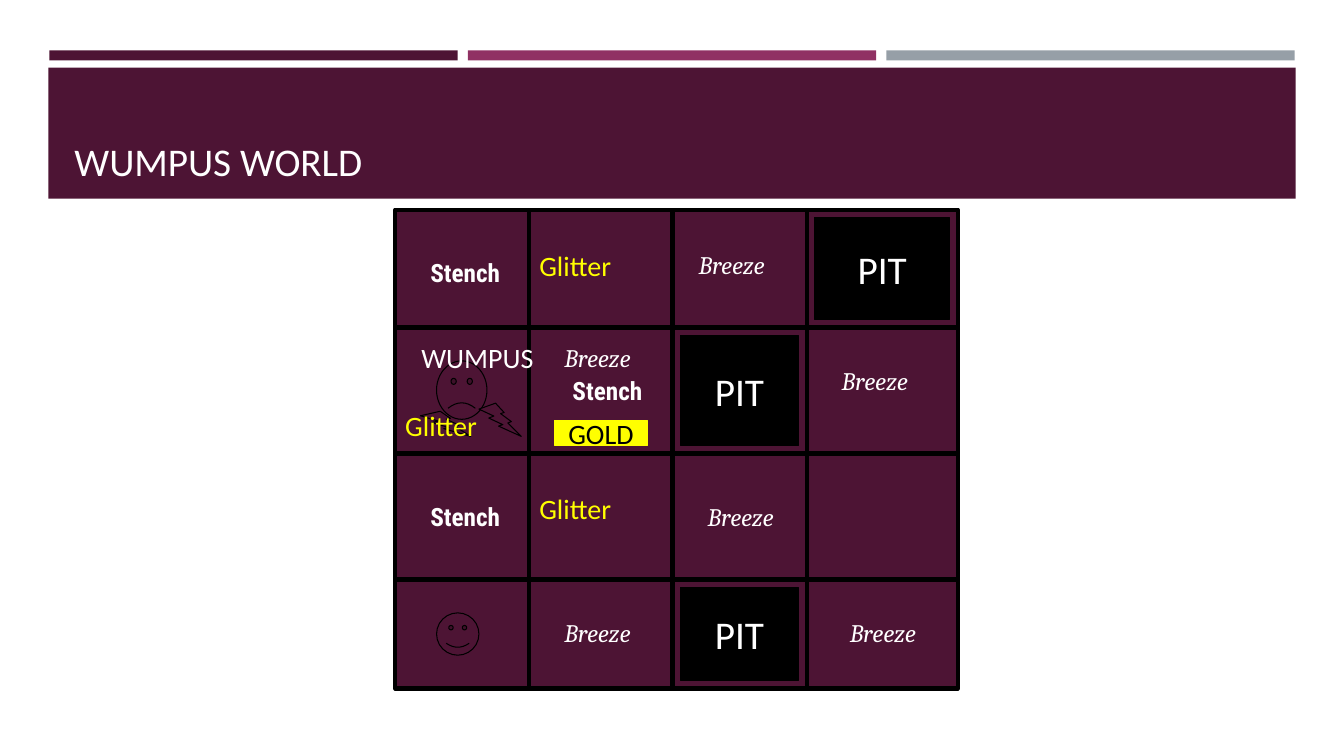
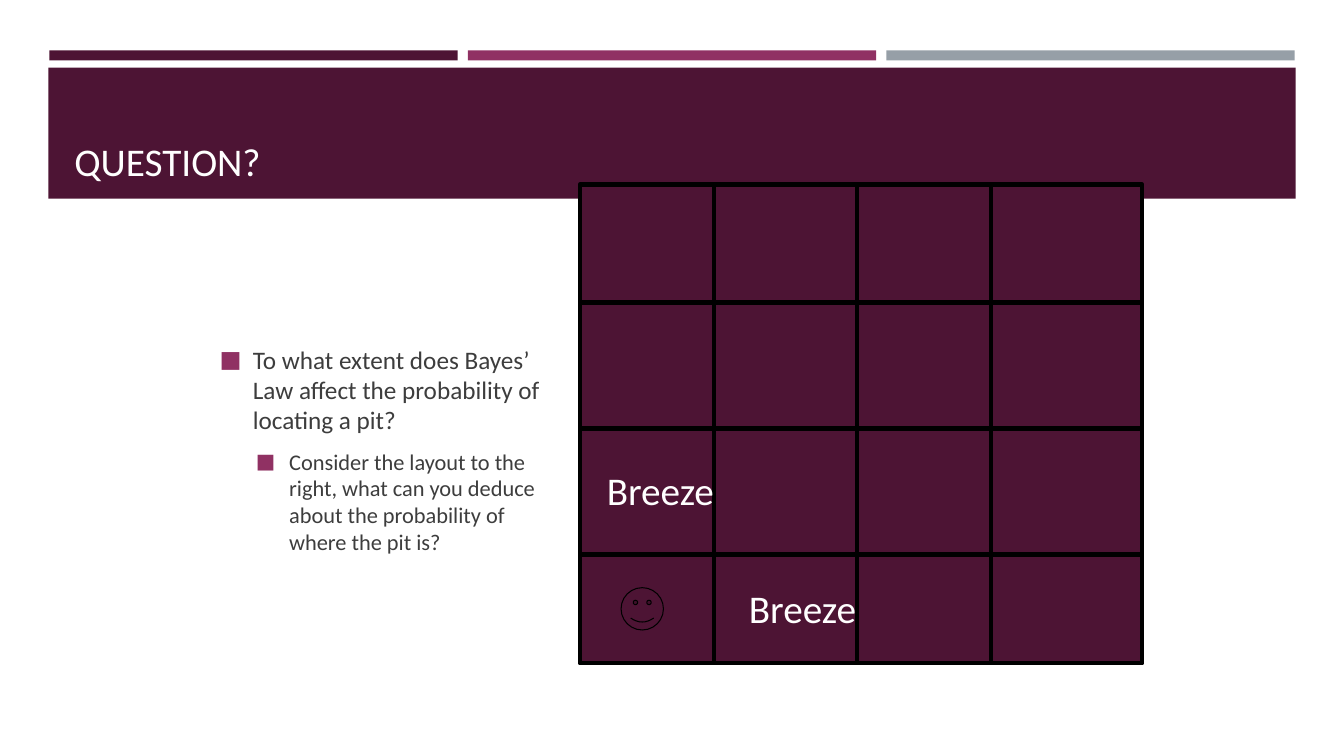
from dataclasses import dataclass

from lxml import etree
from pptx import Presentation
from pptx.dml.color import RGBColor
from pptx.enum.shapes import MSO_CONNECTOR, MSO_SHAPE
from pptx.enum.text import MSO_ANCHOR, MSO_AUTO_SIZE, PP_ALIGN
from pptx.oxml.ns import qn
from pptx.util import Inches, Pt

RECTANGLE = MSO_SHAPE.RECTANGLE
SMILEY = MSO_SHAPE.SMILEY_FACE
BOLT = MSO_SHAPE.LIGHTNING_BOLT
STRAIGHT = MSO_CONNECTOR.STRAIGHT
TOP, MIDDLE, BOTTOM = MSO_ANCHOR.TOP, MSO_ANCHOR.MIDDLE, MSO_ANCHOR.BOTTOM
GROW = MSO_AUTO_SIZE.SHAPE_TO_FIT_TEXT
CENTER = PP_ALIGN.CENTER


@dataclass(frozen=True)
class TextStyle:
    font: str
    size: int
    color: str
    bold: bool = False
    italic: bool = False


class Theme:
    plum, magenta, gray = "4D1434", "903163", "969FA7"
    white, black, yellow, ink = "FFFFFF", "000000", "FFFF00", "3D3D3D"
    heading = TextStyle("Calibri", 28, white)
    breeze = TextStyle("Cambria", 18, white, italic=True)
    stench = TextStyle("Roboto Condensed", 18, white, bold=True)
    glitter = TextStyle("Calibri", 20, yellow)
    wumpus = TextStyle("Calibri", 20, white)
    gold = TextStyle("Calibri", 20, black)
    body = (TextStyle("Calibri", 18, ink), TextStyle("Calibri", 16, ink))
    grid_line, thin_line = 3, 0.75


# Board edges, measured from the top left corner of the board
COLUMNS = (0, 1.33, 2.75, 4.08, 5.58)
ROWS = (0, 1.17, 2.42, 3.67, 4.75)
PIT_MARGIN = 0.08

WORLD_TITLE = "WUMPUS WORLD"
WORLD_CORNER = (3.92, 2.08)
PIT_CELLS = [(2, 1), (3, 0), (2, 3)]  # column, row
# text, style, box size, places on the board
WORLD_LABELS = [
    ("Breeze", Theme.breeze, (0.94, 0.4),
     [(2.91, 0.34), (4.33, 1.5), (1.58, 1.27), (3, 2.84), (4.41, 4), (1.58, 4)]),
    ("WUMPUS", Theme.wumpus, (1.38, 0.44), [(0.16, 1.25)]),
    ("Stench", Theme.stench, (1.04, 0.4), [(0.25, 0.42), (1.66, 1.59), (0.25, 2.84)]),
    ("Glitter", Theme.glitter, (1.38, 0.44), [(1.33, 2.75), (1.33, 0.34), (0, 1.92)]),
]
GOLD_BAR = (1.58, 2.09, 0.92, 0.25)
WUMPUS_FACE = (0.41, 1.5, 0.5, 0.58)
WUMPUS_BOLTS = [(0.83, 1.92, 0.42, 0.33), (0.25, 2, 0.5, 0.25)]
AGENT_FACE = (0.41, 4, 0.42, 0.42)
SMILE = 0.047

QUESTION_TITLE = "QUESTION?"
QUESTION_CORNER = (5.75, 1.83)
QUESTION_LABELS = [("Breeze", Theme.heading, (1.3, 0.57), [(0.17, 2.75), (1.58, 3.92)])]
QUESTION_BODY = [
    (0, "To what extent does Bayes’ Law affect the probability of locating a pit?"),
    (1, "Consider the layout to the right, what can you deduce about the "
        "probability of where the pit is?"),
]
BODY_INDENTS = (0.33, 0.69)
BULLET_HANG = 0.33


def rgb(color):
    return RGBColor.from_string(color)


def write(paragraph, text, style):
    paragraph.text = text
    font = paragraph.runs[0].font
    font.name, font.size, font.color.rgb = style.font, Pt(style.size), rgb(style.color)
    font.bold, font.italic = style.bold, style.italic


def add_shape(slide, kind, box, fill, line=None, width=Theme.thin_line):
    shape = slide.shapes.add_shape(kind, *map(Inches, box))
    shape.shadow.inherit = False
    shape.fill.solid()
    shape.fill.fore_color.rgb = rgb(fill)
    if line:
        shape.line.color.rgb = rgb(line)
        shape.line.width = Pt(width)
    else:
        shape.line.fill.background()
    return shape


def add_block(slide, box, text, style, fill):
    """A filled rectangle with one centred word."""
    frame = add_shape(slide, RECTANGLE, box, fill, fill).text_frame
    frame.word_wrap = False
    frame.vertical_anchor = MIDDLE
    write(frame.paragraphs[0], text, style)
    frame.paragraphs[0].alignment = CENTER


def add_text_frame(slide, box, anchor=TOP, wrap=True):
    frame = slide.shapes.add_textbox(*map(Inches, box)).text_frame
    frame.word_wrap = wrap
    frame.vertical_anchor = anchor
    return frame


def add_line(slide, start, end):
    line = slide.shapes.add_connector(STRAIGHT, *map(Inches, start + end))
    line.line.color.rgb = rgb(Theme.black)
    line.line.width = Pt(Theme.grid_line)
    etree.SubElement(line._element.spPr, qn("a:effectLst"))


def add_face(slide, box, smile):
    face = add_shape(slide, SMILEY, box, Theme.plum, Theme.black)
    face.adjustments[0] = smile


def add_bullet(paragraph, level):
    properties = paragraph._p.get_or_add_pPr()
    properties.set("marL", str(Inches(BODY_INDENTS[level])))
    properties.set("indent", str(Inches(-BULLET_HANG)))
    color = etree.SubElement(properties, qn("a:buClr"))
    etree.SubElement(color, qn("a:srgbClr"), val=Theme.magenta)
    etree.SubElement(properties, qn("a:buSzPct"), val="92000")
    etree.SubElement(properties, qn("a:buFont"), typeface="Calibri")
    etree.SubElement(properties, qn("a:buChar"), char="■")


def add_slide(presentation, title):
    """A blank slide with the three strips and the title band."""
    slide = presentation.slides.add_slide(presentation.slide_layouts[6])
    for index, color in enumerate((Theme.plum, Theme.magenta, Theme.gray)):
        add_shape(slide, RECTANGLE, (0.49 + 4.15 * index, 0.5, 4.05, 0.1), color)
    add_shape(slide, RECTANGLE, (0.48, 0.67, 12.37, 1.3), Theme.plum)
    frame = add_text_frame(slide, (0.64, 0.77, 12.06, 1.11), BOTTOM)
    write(frame.paragraphs[0], title, Theme.heading)
    return slide


def placed(corner, box):
    """Turn a box measured from the board's corner into one on the slide."""
    return (corner[0] + box[0], corner[1] + box[1], *box[2:])


def add_board(slide, corner):
    add_shape(slide, RECTANGLE, (*corner, COLUMNS[-1], ROWS[-1]),
              Theme.plum, Theme.black, Theme.grid_line)
    for x in COLUMNS[1:-1]:
        add_line(slide, placed(corner, (x, 0)), placed(corner, (x, ROWS[-1])))
    for y in ROWS[1:-1]:
        add_line(slide, placed(corner, (0, y)), placed(corner, (COLUMNS[-1], y)))
    add_face(slide, placed(corner, AGENT_FACE), SMILE)


def add_labels(slide, corner, labels):
    for text, style, size, places in labels:
        for place in places:
            frame = add_text_frame(slide, placed(corner, place + size), wrap=False)
            frame.auto_size = GROW
            write(frame.paragraphs[0], text, style)


def add_pit(slide, corner, column, row):
    left, top = COLUMNS[column] + PIT_MARGIN, ROWS[row] + PIT_MARGIN
    width = COLUMNS[column + 1] - PIT_MARGIN - left
    height = ROWS[row + 1] - PIT_MARGIN - top
    add_block(slide, placed(corner, (left, top, width, height)),
              "PIT", Theme.heading, Theme.black)


def build_world(presentation):
    slide = add_slide(presentation, WORLD_TITLE)
    add_board(slide, WORLD_CORNER)
    for column, row in PIT_CELLS:
        add_pit(slide, WORLD_CORNER, column, row)
    add_block(slide, placed(WORLD_CORNER, GOLD_BAR), "GOLD", Theme.gold, Theme.yellow)
    add_face(slide, placed(WORLD_CORNER, WUMPUS_FACE), -SMILE)
    for bolt in WUMPUS_BOLTS:
        add_shape(slide, BOLT, placed(WORLD_CORNER, bolt), Theme.plum, Theme.black)
    add_labels(slide, WORLD_CORNER, WORLD_LABELS)


def build_question(presentation):
    slide = add_slide(presentation, QUESTION_TITLE)
    frame = add_text_frame(slide, (2.08, 1.75, 3.5, 5.42), MIDDLE)
    for index, (level, text) in enumerate(QUESTION_BODY):
        paragraph = frame.add_paragraph() if index else frame.paragraphs[0]
        style = Theme.body[level]
        write(paragraph, text, style)
        paragraph.level = level
        paragraph.space_before = Pt(0.2 * style.size)
        paragraph.space_after = Pt(6)
        add_bullet(paragraph, level)
    add_board(slide, QUESTION_CORNER)
    add_labels(slide, QUESTION_CORNER, QUESTION_LABELS)


def main():
    presentation = Presentation()
    presentation.slide_width, presentation.slide_height = Inches(13.33), Inches(7.5)
    build_world(presentation)
    build_question(presentation)
    presentation.save("out.pptx")


if __name__ == "__main__":
    main()
